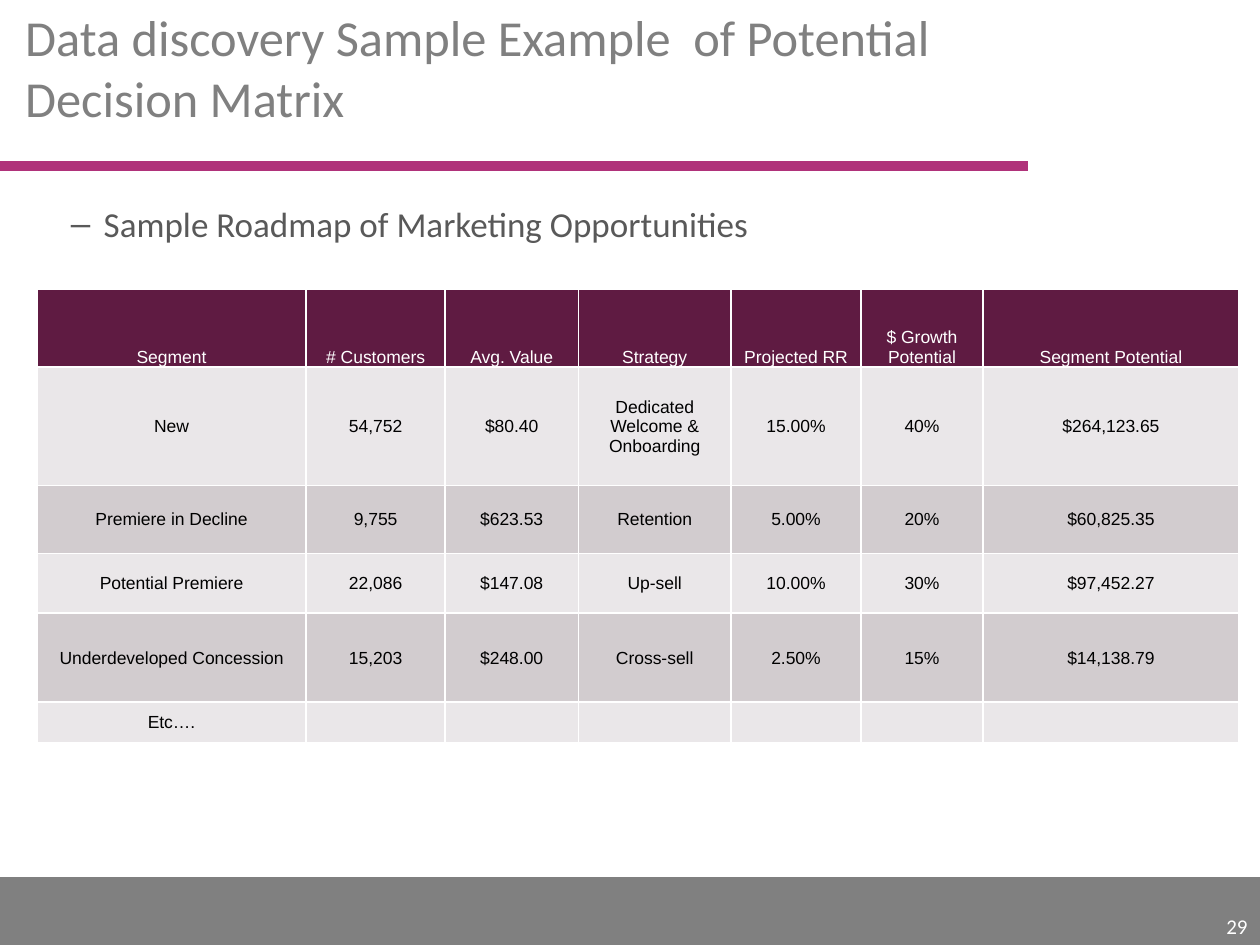
from lxml import etree
from pptx import Presentation
from pptx.dml.color import RGBColor
from pptx.enum.shapes import MSO_CONNECTOR, MSO_SHAPE
from pptx.enum.text import MSO_ANCHOR, MSO_AUTO_SIZE, PP_ALIGN
from pptx.oxml.ns import qn
from pptx.util import Pt

LINE = MSO_CONNECTOR.STRAIGHT
RECT = MSO_SHAPE.RECTANGLE
TOP, MIDDLE, BOTTOM = MSO_ANCHOR.TOP, MSO_ANCHOR.MIDDLE, MSO_ANCHOR.BOTTOM
FIXED = MSO_AUTO_SIZE.NONE
LEFT, CENTER, RIGHT = PP_ALIGN.LEFT, PP_ALIGN.CENTER, PP_ALIGN.RIGHT

WHITE = RGBColor(0xFF, 0xFF, 0xFF)
BLACK = RGBColor(0, 0, 0)
GRAY = RGBColor(0x80, 0x80, 0x80)
DARK = RGBColor(0x59, 0x59, 0x59)
PINK = RGBColor(0xB0, 0x32, 0x7A)
PLUM = RGBColor(0x5F, 0x1B, 0x42)
PALE = RGBColor(0xEA, 0xE7, 0xE9)
MAUVE = RGBColor(0xD2, 0xCC, 0xCF)


def write(frame, text, size, color, align, anchor, font="Calibri"):
    frame.word_wrap = True
    frame.vertical_anchor = anchor
    para = frame.paragraphs[0]
    para.alignment = align
    run = para.add_run()
    run.text = text
    run.font.name = font
    run.font.size = Pt(size)
    run.font.color.rgb = color
    return para


def edge(cell, side, width):
    props = cell._tc.get_or_add_tcPr()
    line = etree.SubElement(props, qn(f"a:ln{side}"), w=str(Pt(width)))
    fill = etree.SubElement(line, qn("a:solidFill"))
    etree.SubElement(fill, qn("a:srgbClr"), val=str(WHITE))


deck = Presentation()
deck.slide_width, deck.slide_height = Pt(720), Pt(540)
slide = deck.slides.add_slide(deck.slide_layouts[5])
shapes = slide.shapes

bar = shapes.add_shape(RECT, 0, Pt(501.8), Pt(720), Pt(38.2))
bar.shadow.inherit = False
bar.fill.solid()
bar.fill.fore_color.rgb = GRAY
bar.line.color.rgb = GRAY
bar.line.width = Pt(0.75)

rule = shapes.add_connector(LINE, 0, Pt(95), Pt(587.5), Pt(95))
rule.line.color.rgb = PINK
rule.line.width = Pt(6)
etree.SubElement(rule._element.spPr, qn("a:effectLst"))

title = shapes.title
title.left, title.top = Pt(7.2), Pt(16.5)
title.width, title.height = Pt(602), Pt(60)
title.text_frame.auto_size = FIXED
write(title.text_frame, "Data discovery Sample Example  of Potential Decision Matrix",
      28.8, GRAY, LEFT, BOTTOM)

lead = shapes.add_textbox(Pt(7.2), Pt(112), Pt(705.6), Pt(32))
para = write(lead.text_frame, "Sample Roadmap of Marketing Opportunities",
             20, DARK, LEFT, TOP)
props = para._p.get_or_add_pPr()
props.set("marL", str(Pt(45)))
props.set("indent", str(Pt(-18.75)))
etree.SubElement(props, qn("a:buFont"), typeface="Arial")
etree.SubElement(props, qn("a:buChar"), char="–")

page = shapes.add_textbox(Pt(570), Pt(517), Pt(150), Pt(23))
write(page.text_frame, "29", 12, WHITE, RIGHT, BOTTOM)

rows = [
    ["Segment", "# Customers", "Avg. Value", "Strategy", "Projected RR",
     "$ Growth Potential", "Segment Potential"],
    ["New", "54,752", "$80.40", "Dedicated Welcome & Onboarding", "15.00%",
     "40%", "$264,123.65"],
    ["Premiere in Decline", "9,755", "$623.53", "Retention", "5.00%",
     "20%", "$60,825.35"],
    ["Potential Premiere", "22,086", "$147.08", "Up-sell", "10.00%",
     "30%", "$97,452.27"],
    ["Underdeveloped Concession", "15,203", "$248.00", "Cross-sell", "2.50%",
     "15%", "$14,138.79"],
    ["Etc…."] + [""] * 6,
]
widths = [154, 79.3, 76.2, 87.3, 74.2, 69.8, 146.2]
heights = [44.8, 67.5, 38.9, 34, 51, 23]

table = shapes.add_table(len(rows), len(widths), Pt(21), Pt(165),
                         Pt(sum(widths)), Pt(sum(heights))).table
table.horz_banding = False
for col, width in zip(table.columns, widths):
    col.width = Pt(width)
for row, height in zip(table.rows, heights):
    row.height = Pt(height)

for r, texts in enumerate(rows):
    for c, text in enumerate(texts):
        cell = table.cell(r, c)
        cell.margin_left = cell.margin_right = cell.margin_top = Pt(0.7)
        cell.margin_bottom = 0
        cell.vertical_anchor = MIDDLE if r else BOTTOM
        last = c == len(widths) - 1
        for side in "LRTB":
            thick = last and (r, side) in [(0, "B"), (1, "T")]
            edge(cell, side, 1.5 if thick else 1)
        cell.fill.solid()
        cell.fill.fore_color.rgb = (PALE if r % 2 else MAUVE) if r else PLUM
        if text:
            write(cell.text_frame, text, 10, BLACK if r else WHITE, CENTER,
                  MIDDLE if r else BOTTOM, "Arial")

deck.save("out.pptx")
